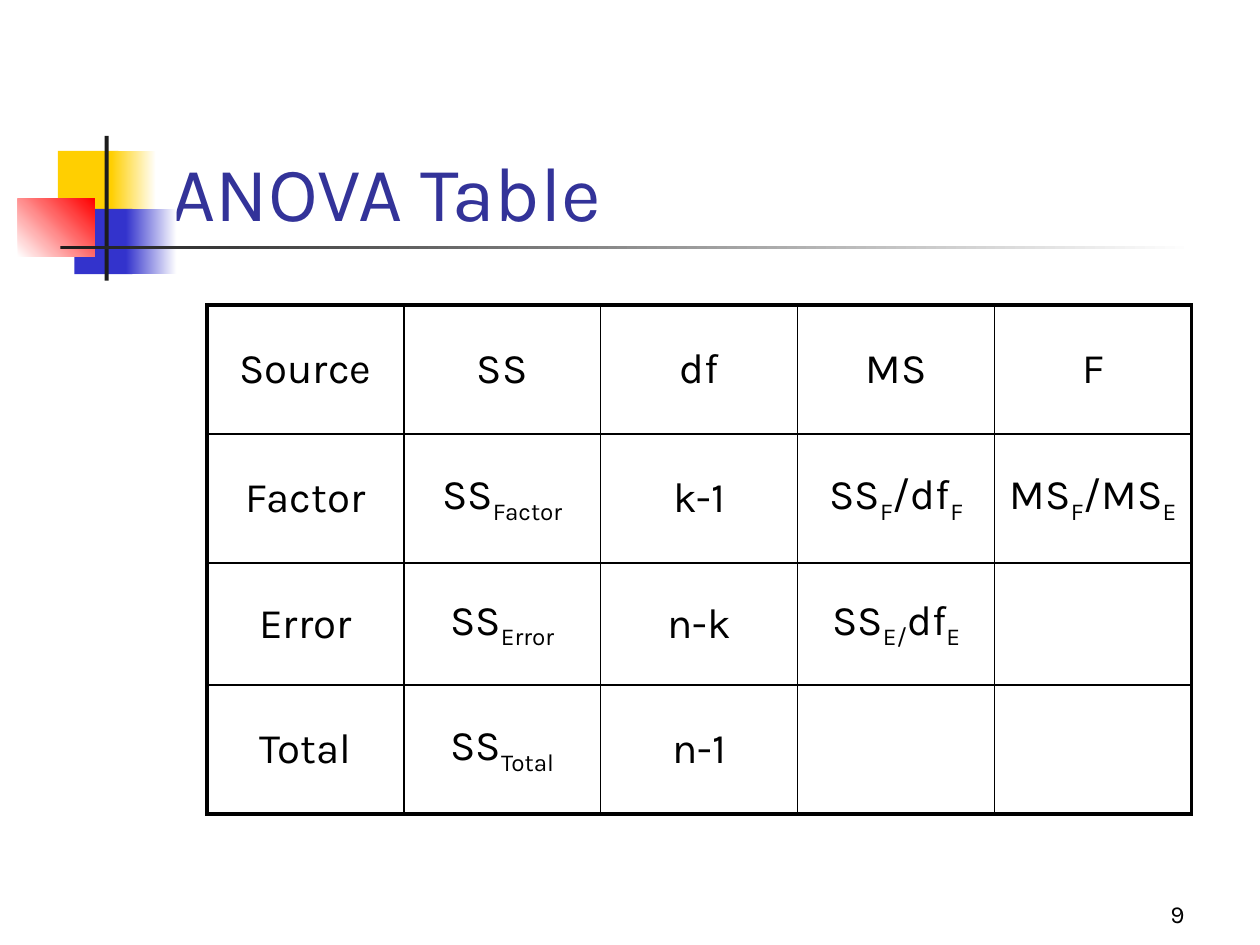
from lxml import etree
from pptx import Presentation
from pptx.dml.color import RGBColor
from pptx.enum.shapes import MSO_SHAPE
from pptx.enum.text import MSO_ANCHOR, MSO_AUTO_SIZE, PP_ALIGN
from pptx.oxml.ns import qn
from pptx.util import Cm, Pt

RECTANGLE = MSO_SHAPE.RECTANGLE
MIDDLE, BOTTOM = MSO_ANCHOR.MIDDLE, MSO_ANCHOR.BOTTOM
LEFT, CENTER, RIGHT = PP_ALIGN.LEFT, PP_ALIGN.CENTER, PP_ALIGN.RIGHT
NO_AUTOFIT = MSO_AUTO_SIZE.NONE

WHITE = RGBColor(0xFF, 0xFF, 0xFF)
BLACK = RGBColor(0x00, 0x00, 0x00)
YELLOW = RGBColor(0xFF, 0xCF, 0x01)
BLUE = RGBColor(0x33, 0x33, 0xCC)
RED = RGBColor(0xFF, 0x00, 0x00)
CHARCOAL = RGBColor(0x1C, 0x1C, 0x1C)
TITLE_BLUE = RGBColor(0x33, 0x33, 0x99)
FONT = "Karla"

ORNAMENT = [
    (0.81, 0.3, 1.22, 1.32, (YELLOW,), 0),
    (1.88, 0.3, 0.91, 1.32, (YELLOW, WHITE), 0),
    (1.14, 1.47, 1.17, 1.32, (BLUE,), 0),
    (2.18, 1.47, 1.02, 1.32, (BLUE, WHITE), 0),
    (0, 1.27, 1.55, 1.17, (WHITE, RED), 45),
    (1.75, 0, 0.08, 2.92, (CHARCOAL,), 0),
    (0.86, 2.21, 22.86, 0.08, (CHARCOAL, WHITE), 0),
]

# Pieces at odd positions between bars are subscripts.
ANOVA_ROWS = [
    ["Source", "SS", "df", "MS", "F"],
    ["Factor", "SS|Factor", "k-1", "SS|F|/df|F", "MS|F|/MS|E"],
    ["Error", "SS|Error", "n-k", "SS|E/|df|E", ""],
    ["Total", "SS|Total", "n-1", "", ""],
]
ROW_HEIGHTS = [2.6, 2.6, 2.46, 2.6]


def style_paragraph(para, size, color, alignment):
    para.alignment = alignment
    para.font.name = FONT
    para.font.size = Pt(size)
    para.font.color.rgb = color


def place(shape, box):
    shape.left, shape.top, shape.width, shape.height = (Cm(side) for side in box)


def add_ornament(page, left, top):
    for x, y, width, height, colors, angle in ORNAMENT:
        block = page.shapes.add_shape(
            RECTANGLE, Cm(left + x), Cm(top + y), Cm(width), Cm(height))
        block.shadow.inherit = False
        block.line.fill.background()
        if len(colors) == 1:
            block.fill.solid()
            block.fill.fore_color.rgb = colors[0]
        else:
            block.fill.gradient()
            block.fill.gradient_angle = angle
            for stop, color in zip(block.fill.gradient_stops, colors):
                stop.color.rgb = color


def set_title(page, box):
    title = page.shapes.title
    place(title, box)
    frame = title.text_frame
    frame.text = "ANOVA Table"
    frame.auto_size = NO_AUTOFIT
    frame.vertical_anchor = BOTTOM
    style_paragraph(frame.paragraphs[0], 44, TITLE_BLUE, LEFT)


def add_page_number(page, box):
    frame = page.shapes.add_textbox(*(Cm(side) for side in box)).text_frame
    frame.word_wrap = True
    frame.vertical_anchor = BOTTOM
    frame.text = "9"
    style_paragraph(frame.paragraphs[0], 14, BLACK, RIGHT)


def set_borders(cell, widths):
    properties = cell._tc.get_or_add_tcPr()
    for side, width in widths.items():
        line = etree.SubElement(properties, qn(f"a:ln{side}"), w=str(Pt(width)))
        fill = etree.SubElement(line, qn("a:solidFill"))
        etree.SubElement(fill, qn("a:srgbClr"), val=str(BLACK))


def fill_cell(cell, content):
    cell.fill.background()
    cell.vertical_anchor = MIDDLE
    para = cell.text_frame.paragraphs[0]
    style_paragraph(para, 24, BLACK, CENTER)
    para.space_before = Pt(4.8)
    if not content:
        return
    for index, piece in enumerate(content.split("|")):
        span = para.add_run()
        span.text = piece
        if index % 2:
            span.font._element.set("baseline", "-25000")


def add_anova_table(page, left, top, width):
    row_count, column_count = len(ANOVA_ROWS), len(ANOVA_ROWS[0])
    table = page.shapes.add_table(
        row_count, column_count, Cm(left), Cm(top), Cm(width),
        Cm(sum(ROW_HEIGHTS))).table
    table.first_row = False
    table.horz_banding = False
    for column in table.columns:
        column.width = Cm(width / column_count)
    for row, height in zip(table.rows, ROW_HEIGHTS):
        row.height = Cm(height)
    for i, contents in enumerate(ANOVA_ROWS):
        for j, content in enumerate(contents):
            outer = {"L": j == 0, "R": j == column_count - 1,
                     "T": i == 0, "B": i == row_count - 1}
            cell = table.cell(i, j)
            set_borders(cell, {side: 2.25 if edge else 1
                               for side, edge in outer.items()})
            fill_cell(cell, content)


def main():
    deck = Presentation()
    deck.slide_width, deck.slide_height = Cm(25.4), Cm(19.05)
    page = deck.slides.add_slide(deck.slide_layouts[5])
    add_ornament(page, 0.36, 2.74)
    set_title(page, (3.2, 1.73, 21.64, 3.18))
    add_page_number(page, (18.85, 17.58, 5.28, 1.27))
    add_anova_table(page, 4.17, 6.15, 19.85)
    deck.save("out.pptx")


if __name__ == "__main__":
    main()
